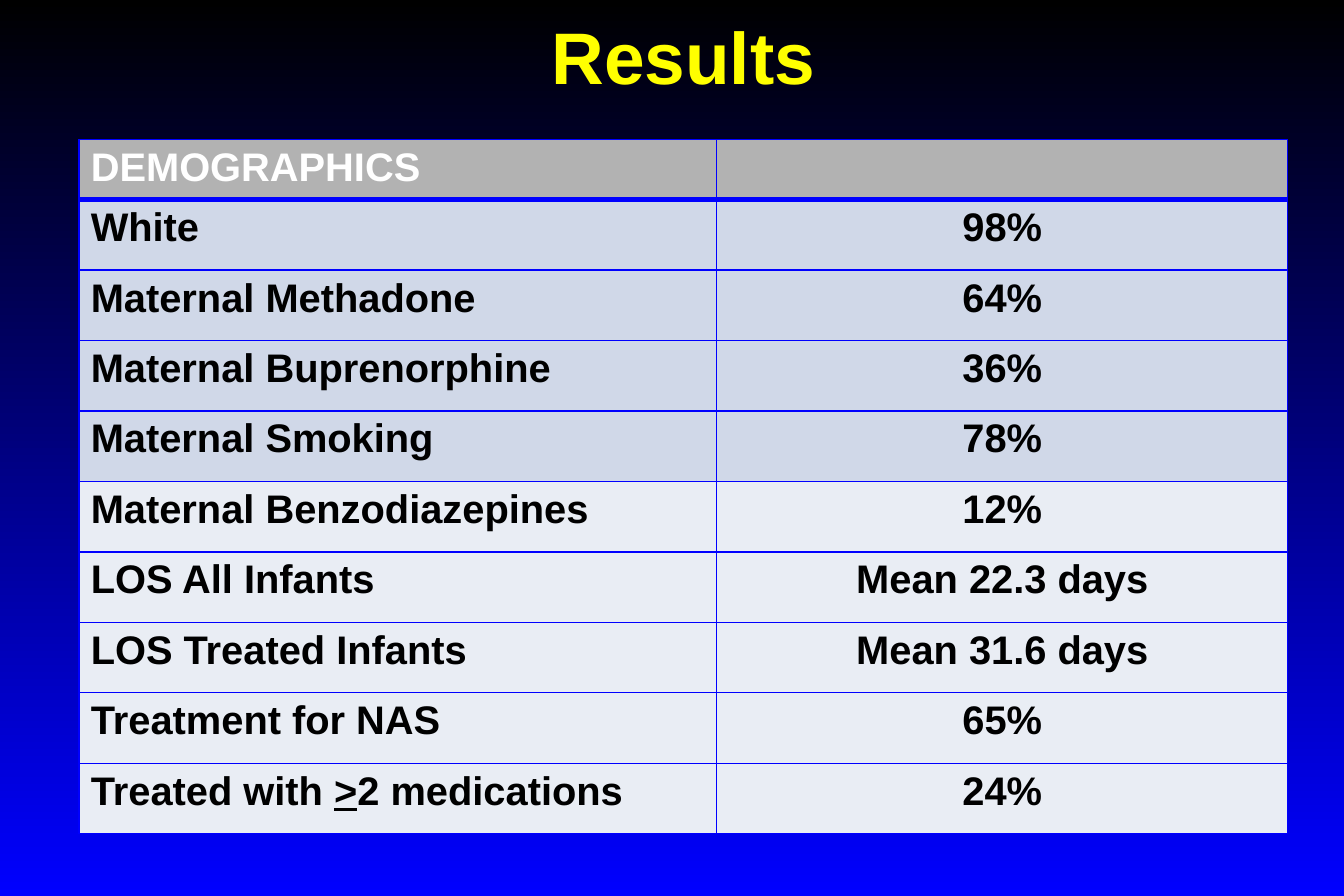
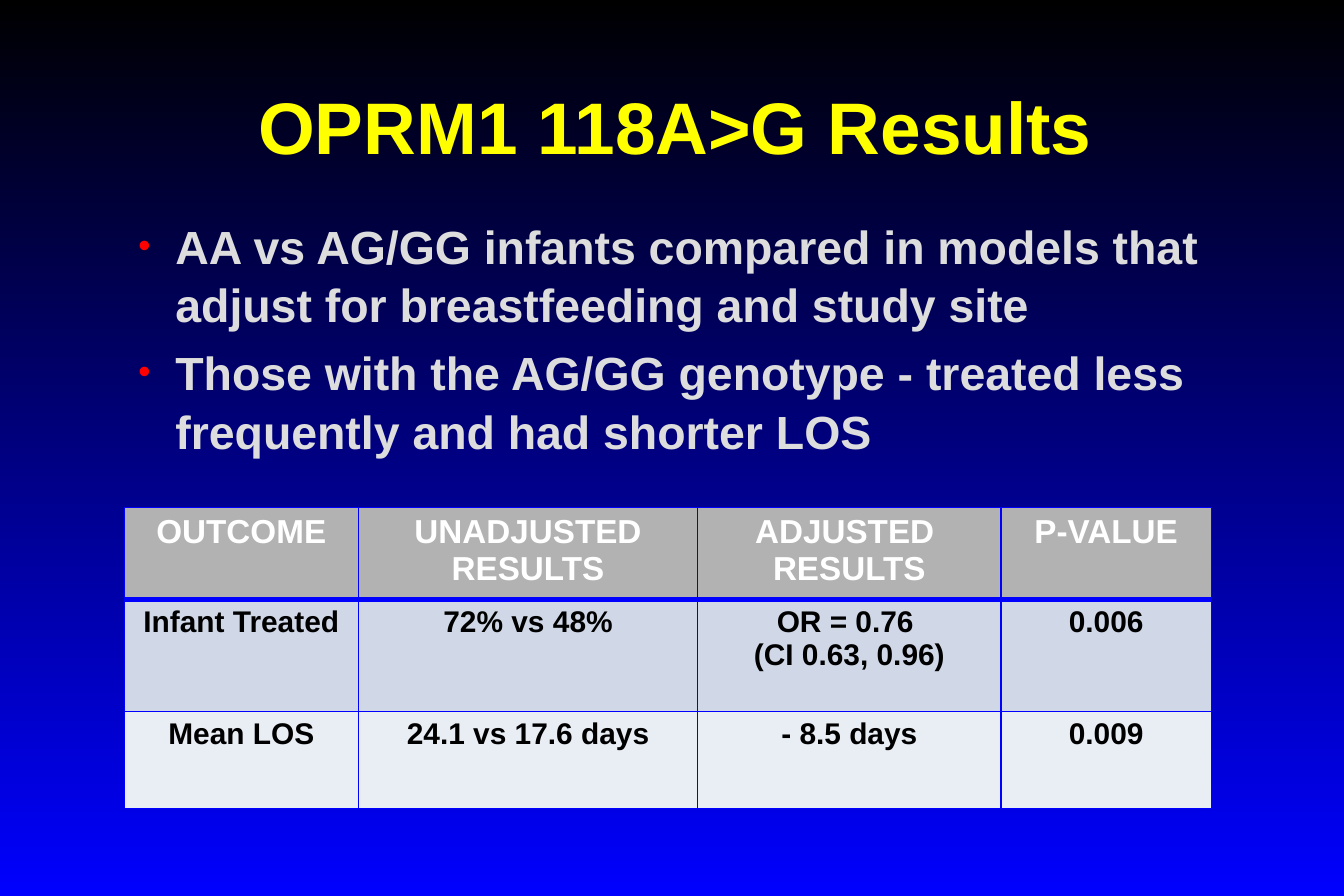
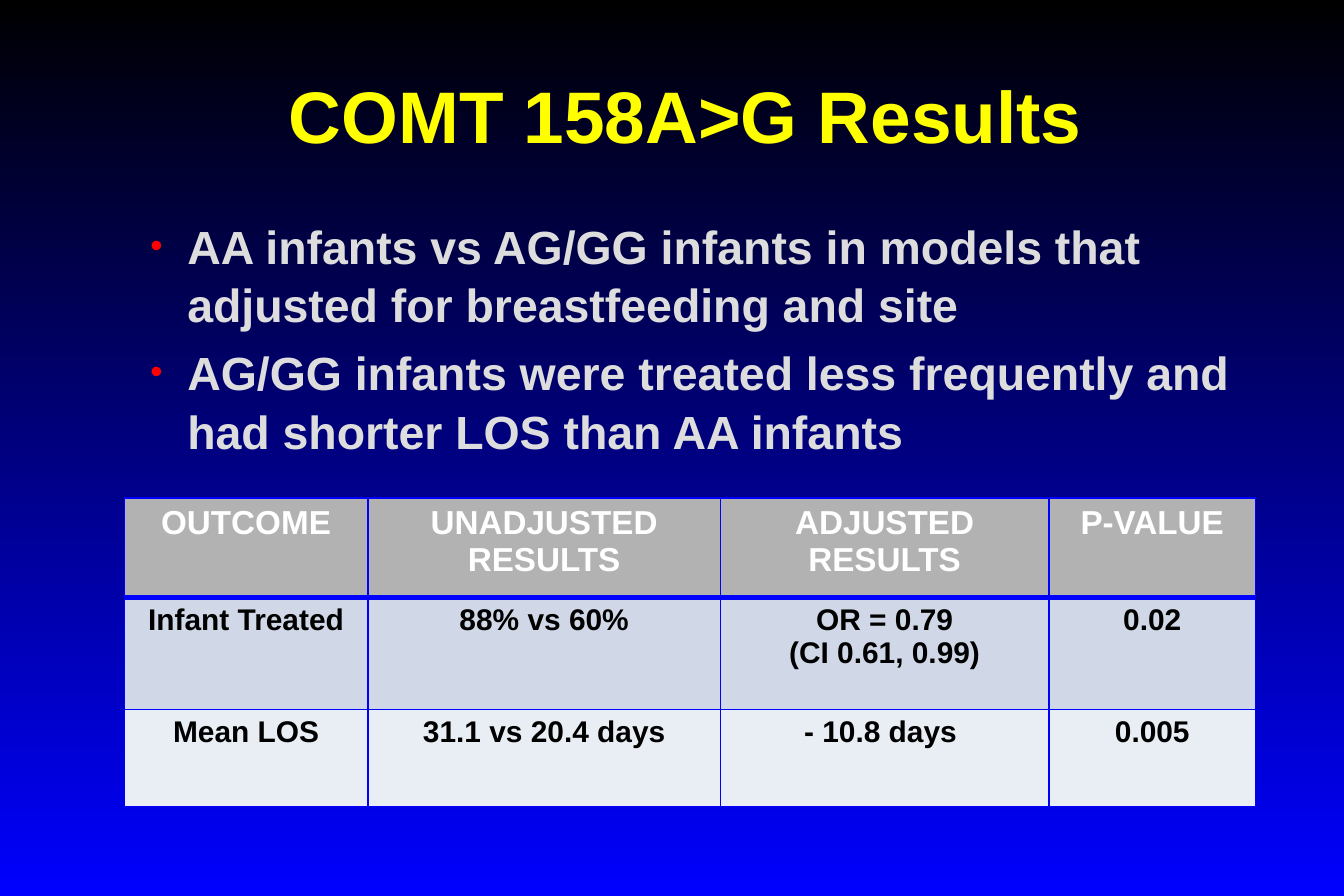
from lxml.etree import SubElement
from pptx import Presentation
from pptx.dml.color import RGBColor
from pptx.enum.text import MSO_ANCHOR, PP_ALIGN
from pptx.oxml import parse_xml
from pptx.oxml.ns import nsdecls, qn
from pptx.util import Inches, Pt

BLACK = RGBColor(0x00, 0x00, 0x00)
BLUE = RGBColor(0x00, 0x00, 0xFF)
YELLOW = RGBColor(0xFF, 0xFF, 0x00)
RED = RGBColor(0xFF, 0x00, 0x00)
WHITE = RGBColor(0xFF, 0xFF, 0xFF)
SILVER = RGBColor(0xDD, 0xDD, 0xDD)
HEADER_GREY = RGBColor(0xB2, 0xB2, 0xB2)
BAND_DARK = RGBColor(0xD0, 0xD8, 0xE8)
BAND_LIGHT = RGBColor(0xE9, 0xED, 0xF4)
FONT = "Arial"
THIN, THICK = Pt(1), Pt(3)


def set_background(master):
    fill = master.background.fill
    fill.gradient()
    fill.gradient_angle = 270
    for stop, color in zip(fill.gradient_stops, (BLACK, BLUE)):
        stop.color.rgb = color


def format_text(frame, size, color, align):
    for paragraph in frame.paragraphs:
        paragraph.alignment = align
        for run in paragraph.runs:
            run.font.name = FONT
            run.font.size = Pt(size)
            run.font.bold = True
            run.font.color.rgb = color


def add_text(slide, text, left, top, width, height):
    box = slide.shapes.add_textbox(Inches(left), Inches(top), Inches(width), Inches(height))
    frame = box.text_frame
    frame.word_wrap = True
    frame.text = text
    return frame


def add_title(slide, text, left, top, width, height):
    frame = add_text(slide, text, left, top, width, height)
    frame.vertical_anchor = MSO_ANCHOR.MIDDLE
    format_text(frame, 44, YELLOW, PP_ALIGN.CENTER)


def add_bullets(slide, points, left):
    frame = add_text(slide, "\n".join(points), left, 1.75, 10.12, 2.4)
    format_text(frame, 28, SILVER, PP_ALIGN.LEFT)
    for paragraph in frame.paragraphs:
        paragraph.space_before = Pt(5.6)
        paragraph.line_spacing = 1.05
        properties = paragraph._p.get_or_add_pPr()
        properties.set("marL", str(Inches(0.81)))
        properties.set("indent", str(Inches(-0.31)))
        bullet_color = SubElement(properties, qn("a:buClr"))
        SubElement(bullet_color, qn("a:srgbClr"), val=str(RED))
        SubElement(properties, qn("a:buSzPct"), val="75000")
        SubElement(properties, qn("a:buFont"), typeface=FONT)
        SubElement(properties, qn("a:buChar"), char="•")


def set_borders(cell, top, bottom):
    properties = cell._tc.get_or_add_tcPr()
    widths = {"lnL": THIN, "lnR": THIN, "lnT": top, "lnB": bottom}
    for position, (side, width) in enumerate(widths.items()):
        border = parse_xml(
            f'<a:{side} {nsdecls("a")} w="{width}"><a:solidFill>'
            f'<a:srgbClr val="{BLUE}"/></a:solidFill></a:{side}>'
        )
        properties.insert(position, border)


def add_results_table(slide, rows, left, top, widths, heights, sizes, dark_rows, first_align):
    frame = slide.shapes.add_table(
        len(rows), len(widths), Inches(left), Inches(top),
        Inches(sum(widths)), Inches(sum(heights)),
    )
    table = frame.table
    for column, width in zip(table.columns, widths):
        column.width = Inches(width)
    for row, height in zip(table.rows, heights):
        row.height = Inches(height)
    header_size, body_size = sizes
    for r, texts in enumerate(rows):
        if r == 0:
            size, color, fill = header_size, WHITE, HEADER_GREY
        else:
            size, color = body_size, BLACK
            fill = BAND_DARK if r <= dark_rows else BAND_LIGHT
        for c, text in enumerate(texts):
            cell = table.cell(r, c)
            cell.text_frame.text = text
            format_text(cell.text_frame, size, color, PP_ALIGN.CENTER if c else first_align)
            cell.fill.solid()
            cell.fill.fore_color.rgb = fill
            set_borders(cell, THICK if r == 1 else THIN, THICK if r == 0 else THIN)
    return table


def underline_part(cell, part):
    paragraph = cell.text_frame.paragraphs[0]
    before, after = paragraph.text.split(part)
    paragraph.text = before
    for text in (part, after):
        paragraph.add_run().text = text
    paragraph.runs[1].font.underline = True


def add_demographics_slide(slide):
    add_title(slide, "Results", 0.66, 0.01, 10.12, 0.9)
    rows = [
        ("DEMOGRAPHICS", ""),
        ("White", "98%"),
        ("Maternal Methadone", "64%"),
        ("Maternal Buprenorphine", "36%"),
        ("Maternal Smoking", "78%"),
        ("Maternal Benzodiazepines", "12%"),
        ("LOS All Infants", "Mean 22.3 days"),
        ("LOS Treated Infants", "Mean 31.6 days"),
        ("Treatment for NAS", "65%"),
        ("Treated with >2 medications", "24%"),
    ]
    heights = [0.46] + [0.59] * (len(rows) - 1)
    table = add_results_table(
        slide, rows, 0.66, 1.17, (5.34, 4.78), heights, (24, 24), 4, PP_ALIGN.LEFT
    )
    treated = table.cell(len(rows) - 1, 0)
    underline_part(treated, ">")
    format_text(treated.text_frame, 24, BLACK, PP_ALIGN.LEFT)


def add_genotype_slide(slide, title, title_top, points, points_left, rows, top, widths, heights):
    add_title(slide, title, 0.96, title_top, 9.56, 1.25)
    add_bullets(slide, points, points_left)
    add_results_table(slide, rows, 1.04, top, widths, heights, (20, 18), 1, PP_ALIGN.CENTER)


def main():
    prs = Presentation()
    prs.slide_width = Inches(11.25)
    prs.slide_height = Inches(7.5)
    set_background(prs.slide_master)
    blank = prs.slide_layouts[6]

    add_demographics_slide(prs.slides.add_slide(blank))
    add_genotype_slide(
        prs.slides.add_slide(blank),
        "OPRM1 118A>G Results ", 0.42,
        (
            "AA vs AG/GG infants compared in models that adjust for breastfeeding and study site",
            "Those with the AG/GG genotype - treated less frequently and had shorter LOS",
        ),
        0.56,
        [
            ("OUTCOME", "UNADJUSTED\nRESULTS", "ADJUSTED \nRESULTS", "P-VALUE"),
            ("Infant Treated", "72% vs 48%", "OR = 0.76 \n(CI 0.63, 0.96)", "0.006"),
            ("Mean LOS", "24.1 vs 17.6 days", "- 8.5 days", "0.009"),
        ],
        4.25, (1.96, 2.84, 2.54, 1.76), (0.72, 0.94, 0.81),
    )
    add_genotype_slide(
        prs.slides.add_slide(blank),
        "COMT 158A>G Results", 0.33,
        (
            "AA infants vs AG/GG infants in models that adjusted for breastfeeding and site",
            "AG/GG infants were treated less frequently and had shorter LOS than AA infants",
        ),
        0.66,
        [
            ("OUTCOME", "UNADJUSTED RESULTS", "ADJUSTED RESULTS", "P-VALUE"),
            ("Infant Treated", "88% vs 60%", "OR = 0.79\n(CI 0.61, 0.99)", "0.02"),
            ("Mean LOS", "31.1 vs 20.4 days", "- 10.8 days ", "0.005"),
        ],
        4.17, (2.04, 2.95, 2.75, 1.73), (0.83, 0.94, 0.81),
    )
    prs.save("out.pptx")


if __name__ == "__main__":
    main()
